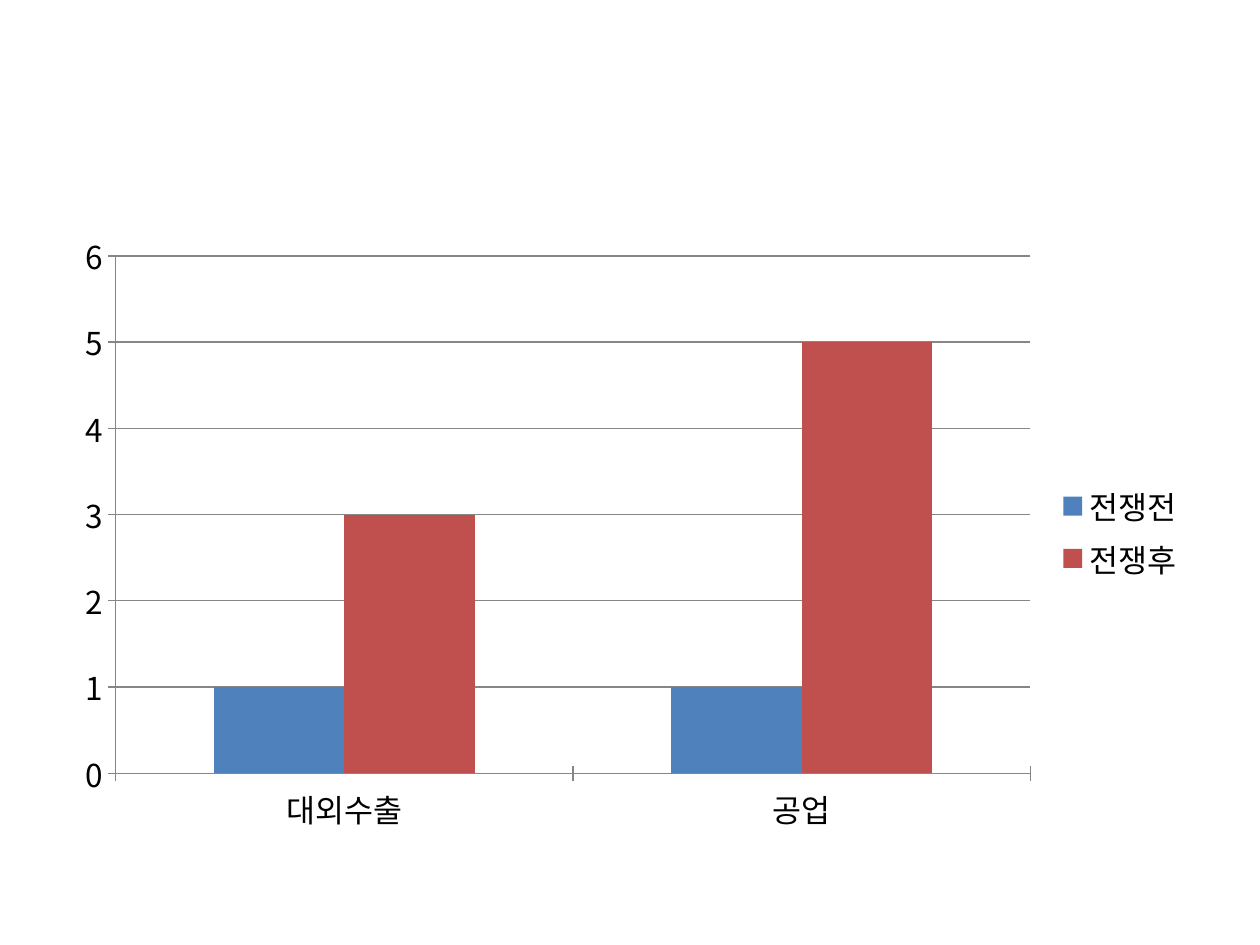
from pptx import Presentation
from pptx.chart.data import CategoryChartData as ChartData
from pptx.dml.color import RGBColor
from pptx.enum.chart import XL_CHART_TYPE as ChartType
from pptx.enum.chart import XL_LEGEND_POSITION as LegendPosition
from pptx.enum.chart import XL_TICK_MARK as TickMark
from pptx.oxml import parse_xml
from pptx.oxml.ns import nsdecls, qn
from pptx.util import Pt

FONT = "Noto Sans CJK KR"


def color(value):
    return RGBColor.from_string(value)


class SlideBuilder:
    """Holds the chart style and the current slide."""

    def __init__(self, page, font=FONT, size=18, ink="000000", rule="868686"):
        self.page = page
        self.font = font
        self.size = size
        self.ink = ink
        self.rule = rule

    def column_chart(self, left, top, width, height, categories, series):
        data = ChartData()
        data.categories = categories
        for name, values, _ in series:
            data.add_series(name, values)
        frame = self.page.shapes.add_chart(
            ChartType.COLUMN_CLUSTERED, Pt(left), Pt(top), Pt(width), Pt(height), data
        )
        chart = frame.chart
        chart.has_title = False
        self.style_text(chart)
        self.style_axes(chart)
        chart.has_legend = True
        chart.legend.position = LegendPosition.RIGHT
        chart.legend.include_in_layout = False

        plot = chart.plots[0]
        plot.vary_by_categories = False
        plot.gap_width = 150
        plot.overlap = 0
        for bars, (_, _, fill) in zip(plot.series, series):
            bars.format.fill.solid()
            bars.format.fill.fore_color.rgb = color(fill)
        return chart

    def style_text(self, chart):
        chart.font.name = self.font
        chart.font.size = Pt(self.size)
        chart.font.color.rgb = color(self.ink)
        for latin in chart.element.iter(qn("a:latin")) if hasattr(chart, "element") else ():
            latin.addnext(parse_xml(f'<a:ea {nsdecls("a")} typeface="{self.font}"/>'))

    def style_axes(self, chart):
        values = chart.value_axis
        values.minimum_scale = 0
        values.maximum_scale = 6
        values.major_unit = 1
        values.has_major_gridlines = True
        for axis in (chart.category_axis, values):
            axis.major_tick_mark = TickMark.CROSS
            axis.minor_tick_mark = TickMark.NONE
        for part in (chart.category_axis, values, values.major_gridlines):
            part.format.line.color.rgb = color(self.rule)
            part.format.line.width = Pt(0.75)


def main():
    deck = Presentation()
    deck.slide_width = Pt(720)
    deck.slide_height = Pt(540)
    builder = SlideBuilder(deck.slides.add_slide(deck.slide_layouts[6]))
    builder.column_chart(
        36, 126, 648, 356.4,
        categories=["대외수출", "공업"],
        series=[("전쟁전", (1, 1), "4F81BD"), ("전쟁후", (3, 5), "C0504D")],
    )
    deck.save("out.pptx")


if __name__ == "__main__":
    main()
